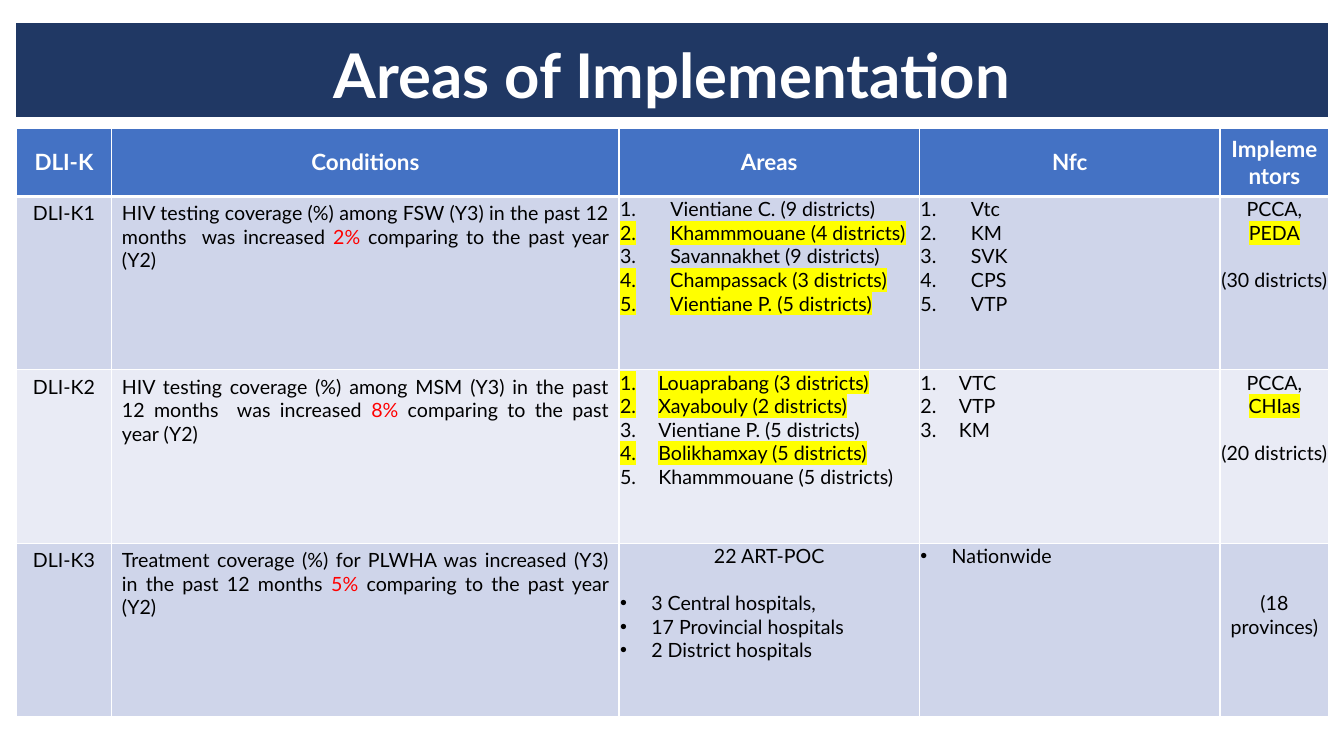
from lxml.etree import SubElement
from pptx import Presentation
from pptx.dml.color import RGBColor
from pptx.enum.shapes import MSO_SHAPE
from pptx.enum.text import MSO_ANCHOR, PP_ALIGN
from pptx.oxml import parse_xml
from pptx.oxml.ns import nsdecls, qn
from pptx.util import Inches, Pt

WHITE = RGBColor(0xFF, 0xFF, 0xFF)
BLACK = RGBColor(0, 0, 0)
RED = RGBColor(0xFF, 0, 0)
YELLOW = RGBColor(0xFF, 0xFF, 0)
NAVY = RGBColor(0x20, 0x38, 0x64)
BLUE = RGBColor(0x44, 0x72, 0xC4)
BANDS = RGBColor(0xCF, 0xD5, 0xEA), RGBColor(0xE9, 0xEB, 0xF5)
FONT, BODY_SIZE = "Lato", 14
LINE = 1.2 * BODY_SIZE  # height of one body line, points

# Content: items starting with "*" are highlighted
TITLE = "Areas of Implementation"
HEADERS = ["DLI-K", "Conditions", "Areas", "Nfc", "Implementors"]
ROWS = [
    dict(code="DLI-K1", indent=0.5, bullet="1.",
         condition=("HIV testing coverage (%) among FSW (Y3) in the past 12 months  was increased ",
                    "2%", " comparing to the past year (Y2)"),
         areas=["Vientiane C. (9 districts)", "*Khammmouane (4 districts)",
                "Savannakhet (9 districts)", "*Champassack (3 districts)",
                "*Vientiane P. (5 districts)"],
         nfc=["Vtc", "KM", "SVK", "CPS", "VTP"],
         who=("PCCA, ", "*PEDA"), count="(30 districts)"),
    dict(code="DLI-K2", indent=0.38, bullet="1.",
         condition=("HIV testing coverage (%) among MSM (Y3) in the past 12 months  was increased ",
                    "8%", " comparing to the past year (Y2)"),
         areas=["*Louaprabang (3 districts)", "*Xayabouly (2 districts)",
                "Vientiane P. (5 districts)", "*Bolikhamxay (5 districts)",
                "Khammmouane (5 districts)"],
         nfc=["VTC", "VTP", "KM"],
         who=("PCCA, ", "*CHIas"), count="(20 districts)"),
    dict(code="DLI-K3", indent=0.31, bullet="•",
         condition=("Treatment coverage (%) for PLWHA was increased (Y3) in the past 12 months ",
                    "5% ", "comparing to the past year (Y2)"),
         heading="22 ART-POC",
         areas=["3 Central hospitals,", "17 Provincial hospitals", "2 District hospitals"],
         nfc=["Nationwide"], who=(), count="(18 provinces)"),
]

# Layout, inches
LEFT, WIDTH = 0.16, 13.01
TITLE_TOP, TITLE_HEIGHT = 0.23, 0.93
TABLE_TOP, HEADER_HEIGHT, ROW_HEIGHT = 1.27, 0.68, 1.72
COLUMNS = [0.95, 5.03, 2.98, 2.98, 1.08]


def add_text(tf, *runs, colors=(), size=BODY_SIZE, color=BLACK, bold=False,
             align=PP_ALIGN.CENTER, before=0, bullet=None, indent=0):
    """Add one paragraph, using the empty first one if there is one."""
    p = tf.paragraphs[0] if not tf.paragraphs[0].runs else tf.add_paragraph()
    p.alignment = align
    if before:
        p.space_before = Pt(before)
    if bullet:
        pPr = p._p.get_or_add_pPr()
        pPr.set("marL", str(Inches(indent)))
        pPr.set("indent", str(-Inches(indent)))
        if bullet == "1.":
            SubElement(pPr, qn("a:buFont"), typeface="+mj-lt")
            SubElement(pPr, qn("a:buAutoNum"), type="arabicPeriod")
        else:
            SubElement(pPr, qn("a:buFont"), typeface="Arial")
            SubElement(pPr, qn("a:buChar"), char=bullet)
    for i, text in enumerate(runs):
        r = p.add_run()
        r.text = text.lstrip("*")
        r.font.size, r.font.bold = Pt(size), bold
        r.font.color.rgb = colors[i] if colors else color
        if text.startswith("*"):
            mark = SubElement(r.font._element, qn("a:highlight"))
            SubElement(mark, qn("a:srgbClr"), val=str(YELLOW))
        r.font.name = FONT
    return p


def add_list(tf, items, row, first_gap=0):
    for i, item in enumerate(items):
        add_text(tf, item, align=PP_ALIGN.JUSTIFY, bullet=row["bullet"],
                 indent=row["indent"], before=0 if i else first_gap)


def style_cell(cell, fill, top=1, bottom=1):
    cell.fill.solid()
    cell.fill.fore_color.rgb = fill
    widths = {"L": 1, "R": 1, "T": top, "B": bottom}
    for i, (side, width) in enumerate(widths.items()):
        cell._tc.get_or_add_tcPr().insert(i, parse_xml(
            f'<a:ln{side} {nsdecls("a")} w="{Pt(width)}"><a:solidFill>'
            f'<a:srgbClr val="{WHITE}"/></a:solidFill></a:ln{side}>'))


prs = Presentation()
prs.slide_width, prs.slide_height = Inches(13.33), Inches(7.5)
s = prs.slides.add_slide(prs.slide_layouts[6])

# Title bar
sp = s.shapes.add_shape(MSO_SHAPE.RECTANGLE, Inches(LEFT), Inches(TITLE_TOP),
                        Inches(WIDTH), Inches(TITLE_HEIGHT))
sp.shadow.inherit = False
sp.fill.solid()
sp.fill.fore_color.rgb = NAVY
sp.line.fill.background()
sp.text_frame.word_wrap = True
sp.text_frame.vertical_anchor = MSO_ANCHOR.BOTTOM
p = add_text(sp.text_frame, TITLE, size=44, color=WHITE, bold=True)
p.line_spacing = 0.9

# Table grid
heights = [HEADER_HEIGHT] + [ROW_HEIGHT] * len(ROWS)
table = s.shapes.add_table(len(heights), len(COLUMNS), Inches(LEFT), Inches(TABLE_TOP),
                           Inches(WIDTH), Inches(sum(heights))).table
for column, width in zip(table.columns, COLUMNS):
    column.width = Inches(width)
for table_row, height in zip(table.rows, heights):
    table_row.height = Inches(height)

# Header row
for c, header in enumerate(HEADERS):
    cell = table.cell(0, c)
    style_cell(cell, BLUE, bottom=3)
    cell.vertical_anchor = MSO_ANCHOR.MIDDLE
    add_text(cell.text_frame, header, size=16, color=WHITE, bold=True)

# Body rows
for n, row in enumerate(ROWS, 1):
    cells = [table.cell(n, c) for c in range(len(COLUMNS))]
    for cell in cells:
        style_cell(cell, BANDS[(n - 1) % 2], top=3 if n == 1 else 1)
    for cell in cells[2:]:
        cell.margin_left = cell.margin_right = cell.margin_top = Inches(0.01)
        cell.margin_bottom = 0
    code, condition, areas, nfc, who = [cell.text_frame for cell in cells]
    add_text(code, row["code"])
    add_text(condition, *row["condition"], colors=(BLACK, RED, BLACK),
             align=PP_ALIGN.JUSTIFY)
    if "heading" in row:
        add_text(areas, row["heading"])
    add_list(areas, row["areas"], row, first_gap=LINE if "heading" in row else 0)
    add_list(nfc, row["nfc"], row)
    if row["who"]:
        add_text(who, *row["who"])
        add_text(who, row["count"], before=LINE)
    else:
        cells[-1].margin_top = Inches(0.01) + Pt(2 * LINE)
        add_text(who, row["count"])

prs.save("out.pptx")
